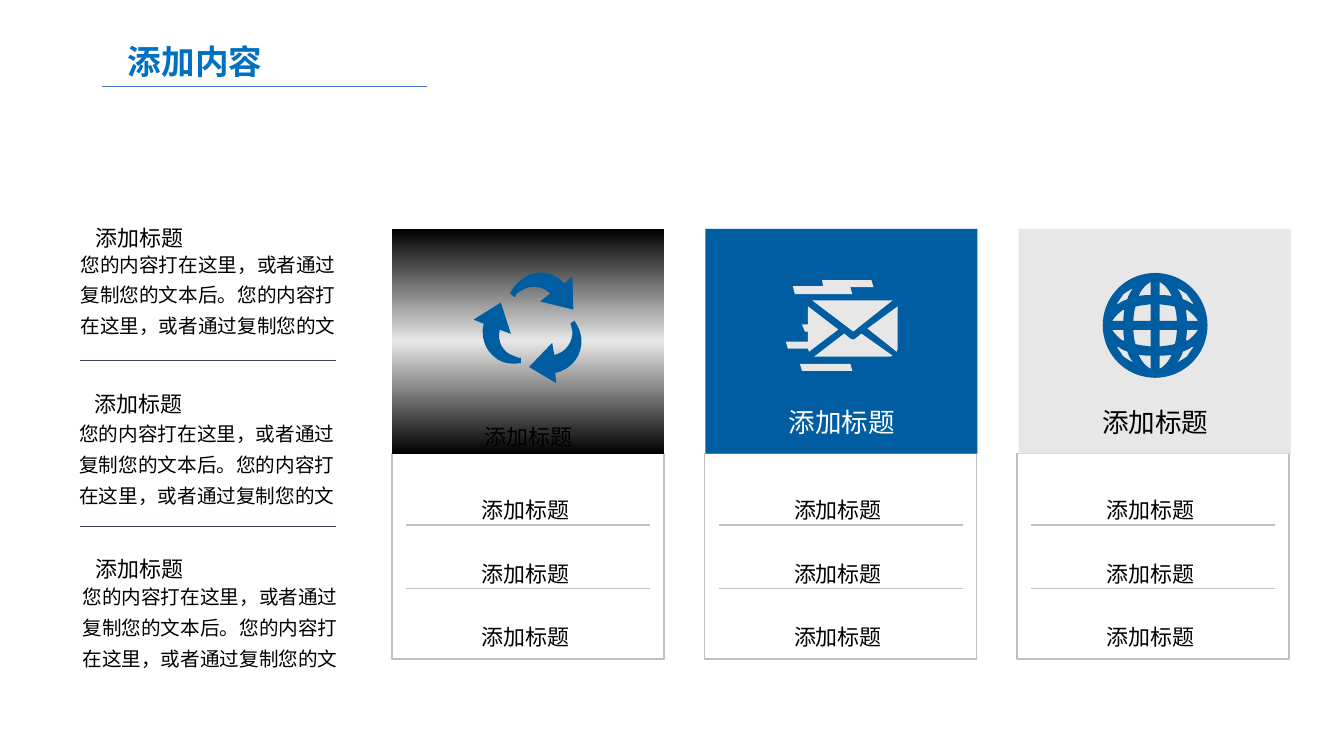
from copy import deepcopy
from dataclasses import dataclass
from math import cos, pi, sin

from pptx import Presentation
from pptx import util as u
from pptx.dml.color import RGBColor
from pptx.enum import shapes, text
from pptx.oxml.ns import qn
from pptx.oxml.xmlchemy import OxmlElement


@dataclass(frozen=True)
class Theme:
    font: str = "Noto Sans CJK SC"
    title_blue: str = "0070C0"
    title_rule: str = "4472C4"
    blue: str = "005DA2"
    pale: str = "E7E7E7"
    frame: str = "BFBFBF"
    divider: str = "414455"
    black: str = "000000"
    white: str = "FFFFFF"
    title_size: float = 24
    label_size: float = 27  # drawn smaller because of the lowered baseline
    head_size: float = 19
    body_size: float = 14


THEME = Theme()
LABEL = "添加标题"
PASSAGE = "您的内容打在这里，或者通过复制您的文本后。您的内容打在这里，或者通过复制您的文"

# Icon outlines: pairs are corners, sixes are Bezier curves (two handles, end)
ICON_UNIT = u.Cm(0.0254)
RECYCLE = [
    [(82, 114), (55, 98), (78, 74), (80, 86), (91, 84, 99, 73, 98, 62),
     (97, 59, 97, 57, 96, 55), (100, 52), (104, 58, 106, 63, 107, 70),
     (108, 86, 98, 100, 81, 104)],
    [(0, 51), (27, 34), (37, 65), (26, 61), (23, 72, 29, 84, 40, 87),
     (42, 88, 45, 89, 47, 89), (47, 94), (42, 95, 35, 95, 29, 93),
     (14, 87, 6, 71, 10, 55)],
    [(98, 8), (90, 15), (79, 3, 61, 0, 48, 11), (42, 15, 39, 20, 36, 25),
     (41, 29), (42, 26, 43, 24, 46, 23), (55, 16, 68, 17, 76, 25),
     (66, 33), (99, 41)],
]
ENVELOPE = [
    [(26, 20), (106, 20), (67, 51)],
    [(16, 44), (19, 51), (22, 51), (22, 61), (0, 61), (2, 68), (22, 68),
     (23, 71), (52, 49), (22, 26), (22, 44)],
    [(14, 83), (64, 83), (66, 90), (16, 90)],
    [(36, 0), (85, 0), (87, 7), (64, 7), (66, 14), (9, 14), (7, 6), (37, 6)],
    [(111, 26), (81, 48), (110, 71), (111, 68)],
    [(106, 75), (103, 76), (28, 76), (58, 53), (64, 58), (67, 59), (69, 58), (75, 53)],
]
GLOBE_RADIUS = 52
GLOBE_GAPS = [  # one quadrant, measured from the centre
    [(4.5, 43), (8.5, 41, 12.5, 37, 15.5, 31), (16.5, 29), (13, 30, 8.5, 30, 4.5, 30)],
    [(4.5, 4.5), (4.5, 21), (10, 20, 15, 20, 19.5, 18.5), (20.5, 15, 21.5, 10, 21.5, 4.5)],
    [(42.5, 4.5), (31.5, 4.5), (31.5, 8, 31, 12, 30.5, 15), (32.5, 15),
     (36.5, 12, 40.5, 8, 42.5, 4.5)],
    [(38.5, 21), (35.5, 22), (33, 24, 30, 25, 27.5, 26), (26.5, 30, 24.5, 33, 22.5, 36),
     (21.5, 37), (25.5, 35, 28.5, 33, 31.5, 31), (33.5, 28, 35.5, 25, 38.5, 21)],
]


def rgb(color):
    return RGBColor.from_string(color)


def flatten(outline, steps=8):
    """Turn corners and curves into a list of points."""
    points = []
    for part in outline:
        if len(part) == 2:
            points.append(part)
            continue
        curve = [points[-1], part[:2], part[2:4], part[4:]]
        for step in range(1, steps + 1):
            t = step / steps
            weights = ((1 - t) ** 3, 3 * t * (1 - t) ** 2, 3 * t * t * (1 - t), t ** 3)
            points.append(tuple(sum(w * p[axis] for w, p in zip(weights, curve))
                                for axis in (0, 1)))
    return points


def globe_outlines():
    disc = [(GLOBE_RADIUS * cos(k * pi / 36), GLOBE_RADIUS * sin(k * pi / 36))
            for k in range(72)]
    gaps = [[(sx * x, sy * y) for x, y in flatten(gap)]
            for gap in GLOBE_GAPS for sx in (1, -1) for sy in (1, -1)]
    return [disc] + gaps


def format_text(frame, wording, size, color, align=None, lowered=False):
    frame.text = wording
    frame.vertical_anchor = text.MSO_ANCHOR.TOP
    paragraph = frame.paragraphs[0]
    paragraph.alignment = align
    run = paragraph.runs[0]
    run.font.size = u.Pt(size)
    run.font.name = THEME.font
    run.font.color.rgb = rgb(color)
    props = run._r.get_or_add_rPr()
    east_asian = OxmlElement("a:ea")
    east_asian.set("typeface", THEME.font)
    props.find(qn("a:latin")).addnext(east_asian)
    if lowered:
        props.set("baseline", "-3000")
    return paragraph


def add_text(slide, left, top, width, height, *style, **options):
    frame = slide.shapes.add_textbox(u.Cm(left), u.Cm(top), u.Cm(width), u.Cm(height)).text_frame
    frame.word_wrap = True
    return format_text(frame, *style, **options)


def add_label(slide, left, top, size=THEME.label_size, color=THEME.black, lowered=True):
    add_text(slide, left, top, 3.68, 1.02, LABEL, size, color,
             align=text.PP_ALIGN.CENTER, lowered=lowered)


def add_rule(slide, left, right, y, color, weight=1):
    rule = slide.shapes.add_connector(shapes.MSO_CONNECTOR.STRAIGHT,
                                      u.Cm(left), u.Cm(y), u.Cm(right), u.Cm(y))
    rule.line.color.rgb = rgb(color)
    rule.line.width = u.Pt(weight)
    rule._element.spPr.append(OxmlElement("a:effectLst"))


def add_box(slide, left, top, height, fill=None, line=None):
    box = slide.shapes.add_shape(shapes.MSO_SHAPE.RECTANGLE,
                                 u.Cm(left), u.Cm(top), u.Cm(6.86), u.Cm(height))
    box.shadow.inherit = False
    if fill:
        box.fill.solid()
        box.fill.fore_color.rgb = rgb(fill)
    else:
        box.fill.background()
    if line:
        box.line.color.rgb = rgb(line)
        box.line.width = u.Pt(1)
    else:
        box.line.fill.background()
    return box


def shade(box, colors):
    """Fill with a vertical gradient of three evenly spaced colours."""
    box.fill.gradient()
    box.fill.gradient_angle = 90
    stop_list = box._element.spPr.find(".//" + qn("a:gsLst"))
    stop_list.append(deepcopy(stop_list[0]))
    for index, (stop, color) in enumerate(zip(box.fill.gradient_stops, colors)):
        stop.position = index / 2
        stop.color.rgb = rgb(color)


def add_icon(slide, left, top, outlines, color):
    builder = None
    for outline in outlines:
        points = [(x * ICON_UNIT, y * ICON_UNIT) for x, y in flatten(outline)]
        if builder is None:
            builder = slide.shapes.build_freeform(*points[0], scale=1.0)
        else:
            builder.move_to(*points[0])
        builder.add_line_segments(points[1:], close=True)
    icon = builder.convert_to_shape(u.Cm(left), u.Cm(top))
    icon.shadow.inherit = False
    icon.fill.solid()
    icon.fill.fore_color.rgb = rgb(color)
    icon.line.fill.background()


def add_card(slide, left):
    for row in range(3):
        add_label(slide, left + 1.52, 11.96 + 1.6 * row)
    add_box(slide, left, 11.43, 5.18, line=THEME.frame)
    for y in (13.23, 14.83):
        add_rule(slide, left + 0.36, left + 6.51, y, THEME.frame)


def main():
    prs = Presentation()
    prs.slide_width, prs.slide_height = u.Cm(33.88), u.Cm(19.05)
    slide = prs.slides.add_slide(prs.slide_layouts[5])

    # Title
    title = slide.shapes.title
    title.left, title.top, title.width, title.height = map(u.Cm, (2.95, 0.91, 3.94, 1.27))
    title.text_frame.word_wrap = False
    heading = format_text(title.text_frame, "添加内容", THEME.title_size, THEME.title_blue,
                          align=text.PP_ALIGN.CENTER)
    heading.runs[0].font.bold = True
    add_rule(slide, 2.57, 10.77, 2.18, THEME.title_rule, 0.5)

    # Passages on the left
    for y in (9.09, 13.26):
        add_rule(slide, 2.01, 8.48, y, THEME.divider)
    for label_left, label_top, left, top in ((1.68, 5.11, 1.78, 6.07),
                                             (1.65, 9.3, 1.75, 10.34),
                                             (1.68, 13.44, 1.83, 14.45)):
        add_label(slide, label_left, label_top)
        passage = add_text(slide, left, top, 7.21, 2.67, PASSAGE, THEME.body_size, THEME.black)
        passage.line_spacing = 1.3

    # Cards with their heads
    heads = (
        (THEME.pale, RECYCLE, 2.06, 6.76, THEME.blue, THEME.label_size, THEME.black),
        (THEME.blue, ENVELOPE, 2.03, 7.06, THEME.pale, THEME.head_size, THEME.white),
        (THEME.pale, globe_outlines(), 3.44, 8.2, THEME.blue, THEME.head_size, THEME.black),
    )
    for column, (fill, icon, icon_left, icon_top, icon_color, size, color) in enumerate(heads):
        add_card(slide, 9.88 + 7.88 * column)
        left = 9.88 + 7.9 * column
        head = add_box(slide, left, 5.77, 5.66, fill=fill)
        if column == 0:
            shade(head, (THEME.black, THEME.pale, THEME.black))
        add_icon(slide, left + icon_left, icon_top, icon, icon_color)
        add_label(slide, left + 1.6, 10.11, size, color, lowered=column == 0)

    prs.save("out.pptx")


if __name__ == "__main__":
    main()
